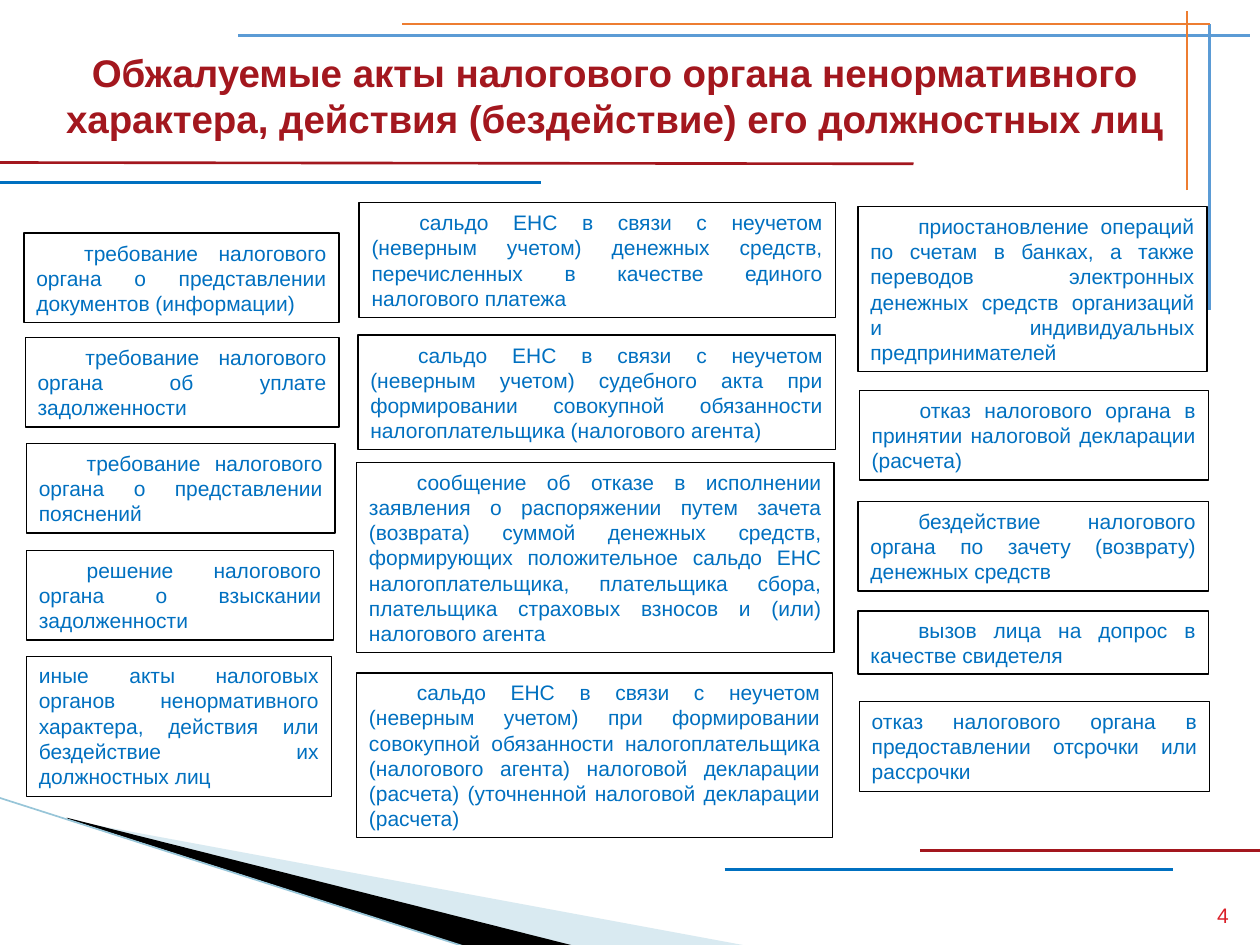
"""Build the slide on tax acts that may be appealed."""
from dataclasses import dataclass

from lxml.etree import SubElement
from pptx import Presentation
from pptx.dml.color import RGBColor
from pptx.enum.shapes import MSO_CONNECTOR, MSO_SHAPE
from pptx.enum.text import MSO_ANCHOR, MSO_AUTO_SIZE, PP_ALIGN
from pptx.oxml.ns import qn
from pptx.util import Inches, Pt

HUES = {
    "red": "A3171E", "blue": "0070C0", "sky": "5B9BD5", "orange": "ED7D31",
    "pale": "A0CBDC", "teal": "97C5D8", "black": "000000", "page": "DA1F28",
}
FRAME = {"word_wrap": True, "auto_size": MSO_AUTO_SIZE.SHAPE_TO_FIT_TEXT}
HEAD = {"name": "Arial", "size": Pt(22), "bold": True}
BODY = {"name": "Arial", "size": Pt(12), "bold": False}


@dataclass
class Rule:
    start: tuple[float, float]
    end: tuple[float, float]
    hue: str
    width: float = 1.5


@dataclass
class Wedge:
    points: list[tuple[float, float]]
    hue: str
    alpha: int = 100


@dataclass
class Box:
    left: float
    top: float
    width: float
    height: float
    text: str
    first: bool = True


WEDGES = [
    Wedge([(0.55, 6.51), (5.95, 7.51), (4.56, 7.51), (0.55, 6.5)], "pale", 40),
    Wedge([(0.53, 6.49), (4.57, 7.51), (3.72, 7.52), (0.54, 6.5)], "black"),
]
RULES = [
    Rule((-0.01, 6.33), (3.71, 7.52), "teal", 0.95),
    Rule((0, 1.45), (4.29, 1.45), "blue"),
    Rule((0, 1.29), (7.25, 1.3), "red"),
    Rule((7.3, 6.75), (10, 6.75), "red"),
    Rule((5.75, 6.9), (9.31, 6.9), "blue"),
]
CORNER = [
    Rule((9.6, 2.46), (9.6, 0.19), "sky"),
    Rule((9.92, 0.28), (1.89, 0.28), "sky"),
    Rule((9.42, 1.51), (9.42, 0.09), "orange"),
    Rule((9.6, 0.19), (3.19, 0.19), "orange"),
]
BOXES = [
    Box(0.19, 1.85, 2.5, 0.71, "требование налогового органа о представлении "
        "документов (информации)"),
    Box(0.2, 2.68, 2.49, 0.71, "требование налогового органа об уплате задолженности"),
    Box(0.21, 3.52, 2.45, 0.71, "требование налогового органа о представлении пояснений"),
    Box(0.21, 4.37, 2.44, 0.71, "решение налогового органа о взыскании задолженности"),
    Box(0.21, 5.21, 2.42, 1.11, "иные акты налоговых органов ненормативного "
        "характера, действия или бездействие их должностных лиц", False),
    Box(2.85, 1.61, 3.78, 0.91, "сальдо ЕНС в связи с неучетом (неверным учетом) "
        "денежных средств, перечисленных в качестве единого налогового платежа"),
    Box(2.84, 2.66, 3.79, 0.91, "сальдо ЕНС в связи с неучетом (неверным учетом) "
        "судебного акта при формировании совокупной обязанности "
        "налогоплательщика (налогового агента)"),
    Box(2.83, 3.67, 3.79, 1.51, "сообщение об отказе в исполнении заявления о "
        "распоряжении путем зачета (возврата) суммой денежных средств, "
        "формирующих положительное сальдо ЕНС налогоплательщика, плательщика "
        "сбора, плательщика страховых взносов и (или) налогового агента"),
    Box(2.83, 5.34, 3.78, 1.31, "сальдо ЕНС в связи с неучетом (неверным учетом) "
        "при формировании совокупной обязанности налогоплательщика (налогового "
        "агента) налоговой декларации (расчета) (уточненной налоговой "
        "декларации (расчета)"),
    Box(6.81, 1.64, 2.77, 1.31, "приостановление операций по счетам в банках, "
        "а также переводов электронных денежных средств организаций и "
        "индивидуальных предпринимателей"),
    Box(6.82, 3.1, 2.77, 0.71, "отказ налогового органа в принятии налоговой "
        "декларации (расчета)"),
    Box(6.81, 3.98, 2.78, 0.71, "бездействие налогового органа по зачету "
        "(возврату) денежных средств"),
    Box(6.81, 4.85, 2.78, 0.5, "вызов лица на допрос в качестве свидетеля"),
    Box(6.82, 5.57, 2.78, 0.71, "отказ налогового органа в предоставлении "
        "отсрочки или рассрочки", False),
]
TITLE = Box(0.35, 0.34, 9.06, 0.84, "Обжалуемые акты налогового органа "
            "ненормативного характера, действия (бездействие) его должностных лиц")
PAGE = Box(9.33, 7.01, 0.52, 0.4, "4")


def tint(hue: str) -> RGBColor:
    """Return the named colour."""
    return RGBColor.from_string(HUES[hue])


def assign(target, values: dict) -> None:
    """Set each value on the target."""
    for name, value in values.items():
        setattr(target, name, value)


def place(box: Box) -> list[int]:
    """Return the box position and size as lengths."""
    return [Inches(n) for n in (box.left, box.top, box.width, box.height)]


def write(shape, text: str, font: dict, hue: str, align, frame: dict):
    """Fill a shape with one paragraph and return it."""
    assign(shape.text_frame, frame)
    para = shape.text_frame.paragraphs[0]
    para.alignment = align
    run = para.add_run()
    run.text = text
    assign(run.font, font)
    run.font.color.rgb = tint(hue)
    return para


def draw_rule(shapes, rule: Rule) -> None:
    """Draw one straight line."""
    ends = [Inches(n) for n in (*rule.start, *rule.end)]
    line = shapes.add_connector(MSO_CONNECTOR.STRAIGHT, *ends)
    line.line.color.rgb = tint(rule.hue)
    line.line.width = Pt(rule.width)
    SubElement(line._element.spPr, qn("a:effectLst"))


def draw_wedge(shapes, wedge: Wedge) -> None:
    """Draw one filled wedge."""
    first, *rest = [(Inches(x), Inches(y)) for x, y in wedge.points]
    pen = shapes.build_freeform(*first)
    pen.add_line_segments(rest, close=True)
    shape = pen.convert_to_shape()
    shape.shadow.inherit = False
    shape.fill.solid()
    shape.fill.fore_color.rgb = tint(wedge.hue)
    shape.line.fill.background()
    if wedge.alpha < 100:
        solid = shape._element.spPr.find(qn("a:solidFill"))
        SubElement(solid[0], qn("a:alpha"), val=str(wedge.alpha * 1000))


def draw_box(shapes, box: Box) -> None:
    """Draw one outlined box of justified text."""
    shape = shapes.add_shape(MSO_SHAPE.RECTANGLE, *place(box))
    shape.shadow.inherit = False
    shape.fill.background()
    shape.line.color.rgb = tint("black")
    shape.line.width = Pt(0.75)
    anchor = MSO_ANCHOR.MIDDLE if box.first else MSO_ANCHOR.TOP
    frame = FRAME | {"vertical_anchor": anchor}
    para = write(shape, box.text, BODY, "blue", PP_ALIGN.JUSTIFY, frame)
    if box.first:
        assign_indent = para._p.get_or_add_pPr().set
        assign_indent("marL", "0")
        assign_indent("indent", str(Inches(0.38)))


def main() -> None:
    """Build and save the slide."""
    deck = Presentation()
    assign(deck, {"slide_width": Inches(10), "slide_height": Inches(7.5)})
    shapes = deck.slides.add_slide(deck.slide_layouts[6]).shapes
    for wedge in WEDGES:
        draw_wedge(shapes, wedge)
    for rule in RULES:
        draw_rule(shapes, rule)
    write(shapes.add_textbox(*place(TITLE)), TITLE.text, HEAD, "red",
          PP_ALIGN.CENTER, FRAME)
    write(shapes.add_textbox(*place(PAGE)), PAGE.text, BODY, "page",
          PP_ALIGN.RIGHT, {"word_wrap": True, "vertical_anchor": MSO_ANCHOR.BOTTOM})
    corner = shapes.add_group_shape().shapes
    for rule in CORNER:
        draw_rule(corner, rule)
    for box in BOXES:
        draw_box(shapes, box)
    deck.save("out.pptx")


if __name__ == "__main__":
    main()
